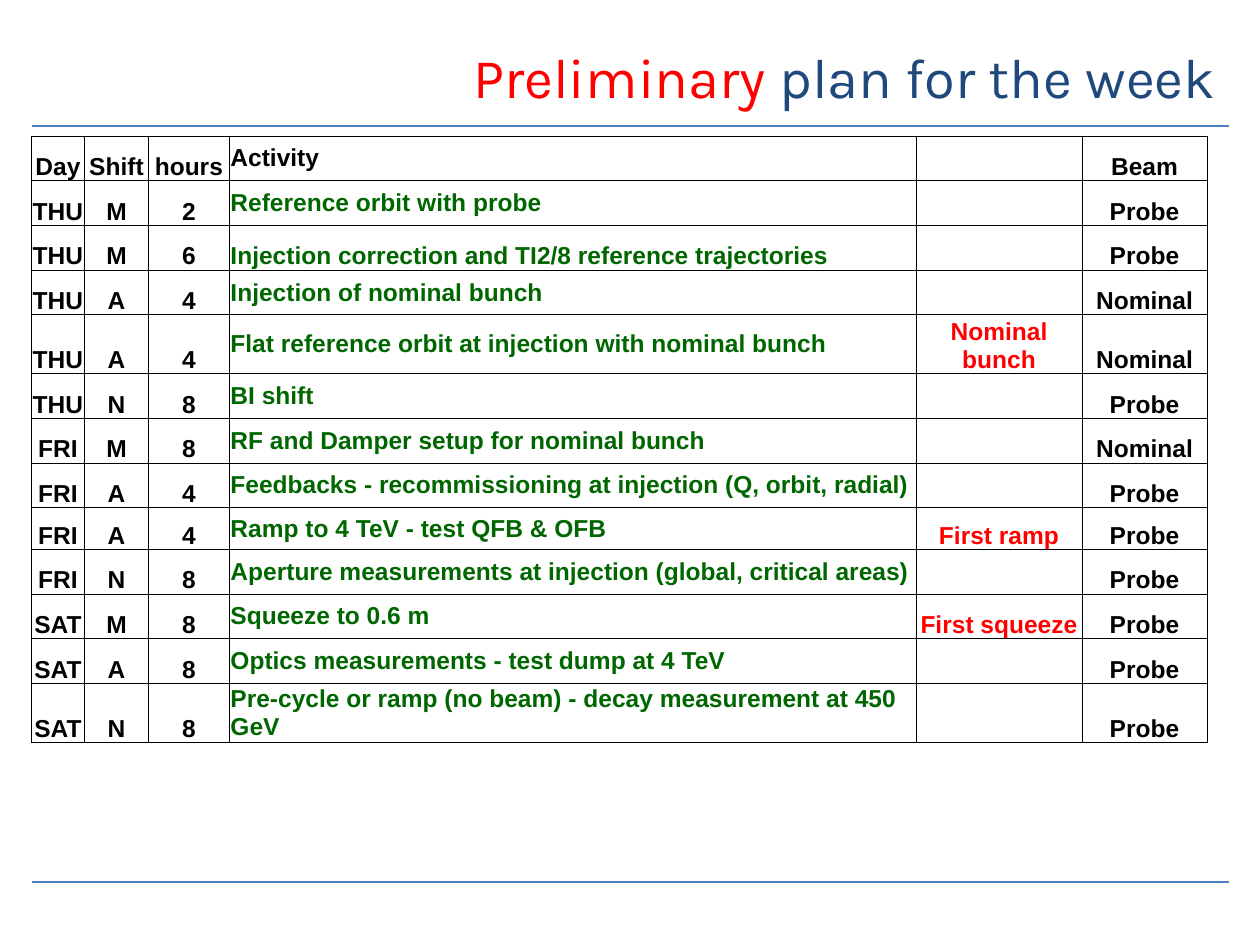
from lxml import etree
from pptx import Presentation
from pptx.dml.color import RGBColor
from pptx.enum import shapes, text
from pptx.oxml.ns import qn
from pptx.util import Inches, Pt

BLACK = RGBColor(0, 0, 0)
WHITE = RGBColor(255, 255, 255)
RED = RGBColor(255, 0, 0)
GREEN = RGBColor(0, 0x66, 0)
NAVY = RGBColor(0x1F, 0x49, 0x7D)
BLUE = RGBColor(0x4B, 0x7E, 0xBC)

HEAD = ("Day", "Shift", "hours", "Activity", "", "Beam")
PLAN = [
    ("THU", "M", "2", "Reference orbit with probe", "", "Probe"),
    ("THU", "M", "6", "Injection correction and TI2/8 reference trajectories", "", "Probe"),
    ("THU", "A", "4", "Injection of nominal bunch", "", "Nominal"),
    ("THU", "A", "4", "Flat reference orbit at injection with nominal bunch",
     "Nominal bunch", "Nominal"),
    ("THU", "N", "8", "BI shift", "", "Probe"),
    ("FRI", "M", "8", "RF and Damper setup for nominal bunch", "", "Nominal"),
    ("FRI", "A", "4", "Feedbacks - recommissioning at injection (Q, orbit, radial)",
     "", "Probe"),
    ("FRI", "A", "4", "Ramp to 4 TeV - test QFB & OFB", "First ramp", "Probe"),
    ("FRI", "N", "8", "Aperture measurements at injection (global, critical areas)",
     "", "Probe"),
    ("SAT", "M", "8", "Squeeze to 0.6 m", "First squeeze", "Probe"),
    ("SAT", "A", "8", "Optics measurements - test dump at 4 TeV", "", "Probe"),
    ("SAT", "N", "8", "Pre-cycle or ramp (no beam) - decay measurement at 450 GeV",
     "", "Probe"),
]
COLS = (0.42, 0.51, 0.64, 5.45, 1.32, 0.99)
ACT, NOTE = 3, 4        # column numbers
LOW, SHORT, BARE = 2, 8, 3  # rows: low-set activity, short height, unfilled note


def add_rule(slide, x, y, w):
    line = slide.shapes.add_connector(
        shapes.MSO_CONNECTOR.STRAIGHT, Inches(x), Inches(y), Inches(x + w), Inches(y))
    line.line.color.rgb = BLUE
    line.line.width = Pt(1.5)
    etree.SubElement(line._element.spPr, qn("a:effectLst"))


def add_title(slide, x, y, w, h):
    frame = slide.shapes.add_textbox(
        Inches(x), Inches(y), Inches(w), Inches(h)).text_frame
    frame.word_wrap = True
    frame.vertical_anchor = text.MSO_ANCHOR.MIDDLE
    para = frame.paragraphs[0]
    para.alignment = text.PP_ALIGN.RIGHT
    para.font.size = Pt(32)
    para.font.name = "Karla"
    for words, color in (("Preliminary", RED), (" plan for the week", NAVY)):
        run = para.add_run()
        run.text = words
        run.font.color.rgb = color


def add_edges(cell):
    props = cell._tc.get_or_add_tcPr()
    for side in ("lnL", "lnR", "lnT", "lnB"):
        edge = etree.SubElement(props, qn(f"a:{side}"), w=str(Pt(0.5)))
        fill = etree.SubElement(edge, qn("a:solidFill"))
        etree.SubElement(fill, qn("a:srgbClr"), val=str(BLACK))


def fill_cell(cell, words, row, col):
    add_edges(cell)
    if col < ACT or (row, col) == (BARE, NOTE):
        cell.fill.background()
    else:
        cell.fill.solid()
        cell.fill.fore_color.rgb = WHITE
    # The day column is only just as wide as its text
    cell.margin_left = cell.margin_right = Inches(0.01 if col else 0)
    cell.margin_top = cell.margin_bottom = 0
    middle = col == ACT and row != LOW
    cell.vertical_anchor = text.MSO_ANCHOR.MIDDLE if middle else text.MSO_ANCHOR.BOTTOM
    para = cell.text_frame.paragraphs[0]
    para.alignment = text.PP_ALIGN.LEFT if col == ACT else text.PP_ALIGN.CENTER
    font = para.font
    font.name, font.size, font.bold = "Arial", Pt(14), True
    font.color.rgb = {ACT: GREEN, NOTE: RED}.get(col, BLACK) if row else BLACK
    if words:
        para.add_run().text = words


def add_plan(slide, x, y, w, h):
    data = [HEAD] + PLAN
    grid = slide.shapes.add_table(
        len(data), len(COLS), Inches(x), Inches(y), Inches(w), Inches(h)).table
    grid.first_row = grid.horz_banding = False
    for col, width in zip(grid.columns, COLS):
        col.width = Inches(width)
    # One row is shorter; the others share the remaining height
    short = 0.33
    tall = (h - short) / (len(data) - 1)
    for r, words in enumerate(data):
        grid.rows[r].height = Inches(short if r == SHORT else tall)
        for c, word in enumerate(words):
            fill_cell(grid.cell(r, c), word, r, c)


def main():
    deck = Presentation()
    deck.slide_width, deck.slide_height = Inches(10), Inches(7.5)
    slide = deck.slides.add_slide(deck.slide_layouts[6])
    # Rules under the title and above the footer
    for y in (1, 7):
        add_rule(slide, 0.25, y, 9.5)
    add_title(slide, 0.75, 0.17, 9, 0.87)
    add_plan(slide, 0.25, 1.08, 9.33, 4.59)
    deck.save("out.pptx")


if __name__ == "__main__":
    main()
